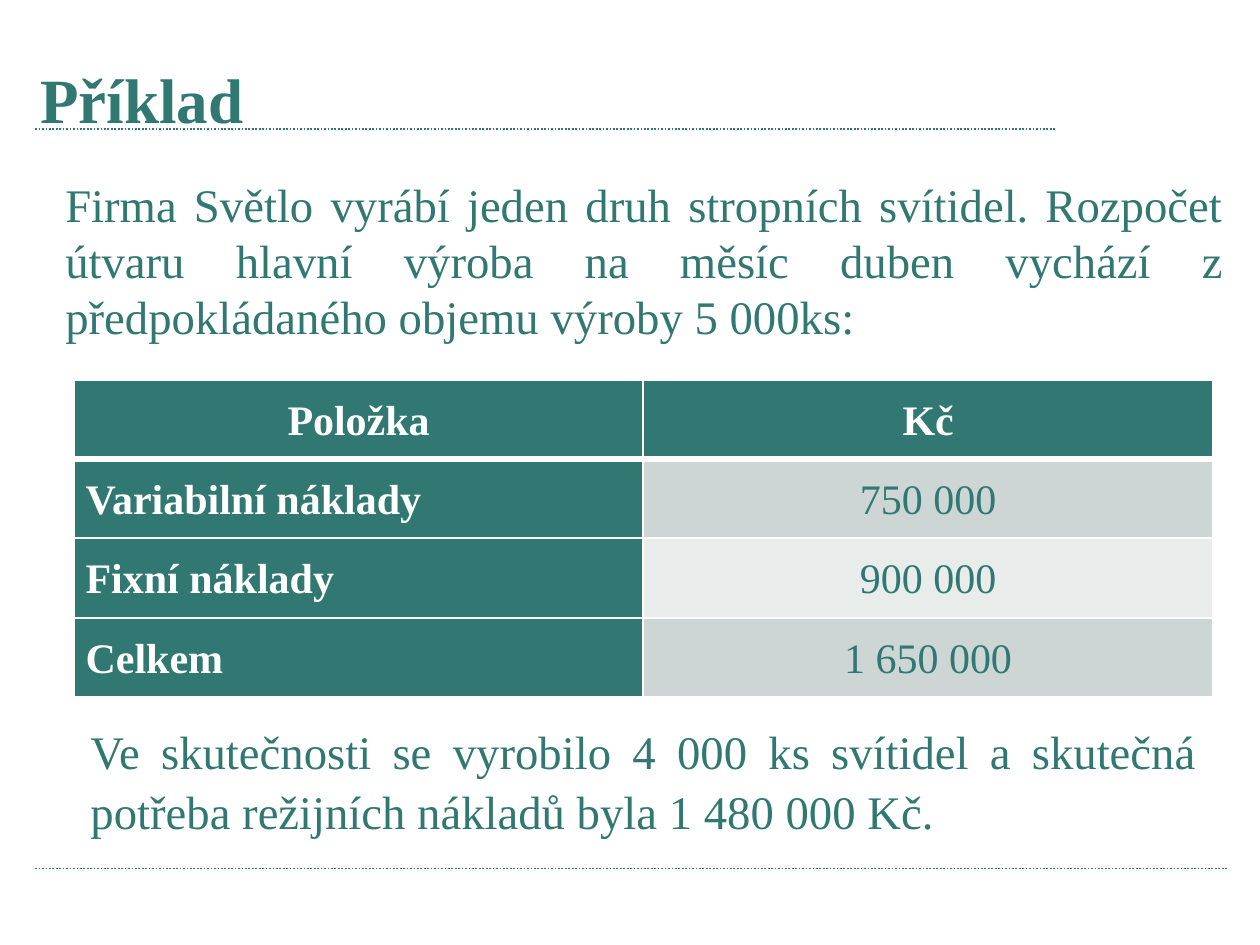
from dataclasses import dataclass

from lxml.etree import SubElement
from pptx import Presentation
from pptx.dml.color import RGBColor
from pptx.enum.dml import MSO_LINE
from pptx.enum.shapes import MSO_CONNECTOR
from pptx.enum.text import MSO_ANCHOR, MSO_AUTO_SIZE, PP_ALIGN
from pptx.oxml.ns import qn
from pptx.util import Inches, Pt


@dataclass(frozen=True)
class Theme:
    font: str = "Times New Roman"
    main: str = "307871"
    light: str = "FFFFFF"
    bands: tuple = ("CDD6D5", "E8ECEB")
    title: int = 27
    body: int = 20
    cell: int = 18


def write(tf, text, theme, size, color, bold=False, align=PP_ALIGN.LEFT, spacing=None):
    p = tf.paragraphs[0]
    p.alignment = align
    if spacing:
        p.line_spacing = spacing
    r = p.add_run()
    r.text = text
    r.font.name = theme.font
    r.font.size = Pt(size)
    r.font.bold = bold
    r.font.color.rgb = RGBColor.from_string(color)


def set_border(cell, side, color, width):
    ln = SubElement(cell._tc.get_or_add_tcPr(), qn(f"a:{side}"), w=str(Pt(width)))
    fill = SubElement(ln, qn("a:solidFill"))
    SubElement(fill, qn("a:srgbClr"), val=color)


class SlideBuilder:
    """Draws styled elements on one slide."""

    def __init__(self, prs, theme):
        self.theme = theme
        self.slide = prs.slides.add_slide(prs.slide_layouts[5])

    def title(self, text, x, y, w, h):
        sp = self.slide.shapes.title
        sp.left, sp.top, sp.width, sp.height = map(Inches, (x, y, w, h))
        tf = sp.text_frame
        tf.auto_size = MSO_AUTO_SIZE.NONE
        tf.vertical_anchor = MSO_ANCHOR.MIDDLE
        write(tf, text, self.theme, self.theme.title, self.theme.main, bold=True)

    def rule(self, x1, x2, y):
        line = self.slide.shapes.add_connector(
            MSO_CONNECTOR.STRAIGHT, Inches(x1), Inches(y), Inches(x2), Inches(y))
        line.line.color.rgb = RGBColor.from_string(self.theme.main)
        line.line.width = Pt(0.75)
        line.line.dash_style = MSO_LINE.ROUND_DOT
        SubElement(line._element.spPr, qn("a:effectLst"))

    def text(self, text, x, y, w, h, spacing=None):
        sp = self.slide.shapes.add_textbox(*map(Inches, (x, y, w, h)))
        tf = sp.text_frame
        tf.word_wrap = True
        tf.auto_size = MSO_AUTO_SIZE.SHAPE_TO_FIT_TEXT
        write(tf, text, self.theme, self.theme.body, self.theme.main,
              align=PP_ALIGN.JUSTIFY, spacing=spacing)

    def table(self, rows, x, y, w, h):
        table = self.slide.shapes.add_table(
            len(rows), len(rows[0]), *map(Inches, (x, y, w, h))).table
        for i, row in enumerate(rows):
            for j, text in enumerate(row):
                self.cell(table.cell(i, j), text, i, j)

    def cell(self, cell, text, i, j):
        theme = self.theme
        heading = i == 0 or j == 0
        cell.margin_left = cell.margin_right = Inches(0.07)
        cell.margin_top = cell.margin_bottom = 0
        cell.vertical_anchor = MSO_ANCHOR.MIDDLE
        widths = {"lnL": 1, "lnR": 1, "lnT": 3 if i == 1 else 1, "lnB": 3 if i == 0 else 1}
        for side, width in widths.items():
            set_border(cell, side, theme.light, width)
        fill = theme.main if heading else theme.bands[(i - 1) % 2]
        cell.fill.solid()
        cell.fill.fore_color.rgb = RGBColor.from_string(fill)
        write(cell.text_frame, text, theme, theme.cell,
              theme.light if heading else theme.main, bold=heading,
              align=PP_ALIGN.LEFT if i and j == 0 else PP_ALIGN.CENTER, spacing=1.07)


def main():
    prs = Presentation()
    prs.slide_width = Inches(7.5)
    prs.slide_height = prs.slide_width * 3 // 4
    s = SlideBuilder(prs, Theme())
    s.rule(0.21, 6.29, 0.77)
    s.rule(0.21, 7.31, 5.17)
    s.title("Příklad", 0.14, 0.29, 6.61, 0.59)
    s.text("Firma Světlo vyrábí jeden druh stropních svítidel. Rozpočet útvaru hlavní "
           "výroba na měsíc duben vychází z předpokládaného objemu výroby 5 000ks:",
           0.29, 1, 7.09, 1.78)
    s.table([("Položka", "Kč"),
             ("Variabilní náklady", "750 000"),
             ("Fixní náklady", "900 000"),
             ("Celkem", "1 650 000")], 0.44, 2.26, 6.78, 1.89)
    s.text("Ve skutečnosti se vyrobilo 4 000 ks svítidel a skutečná potřeba režijních "
           "nákladů byla 1 480 000 Kč.", 0.44, 4.23, 6.78, 0.8, spacing=1.07)
    prs.save("out.pptx")


if __name__ == "__main__":
    main()
